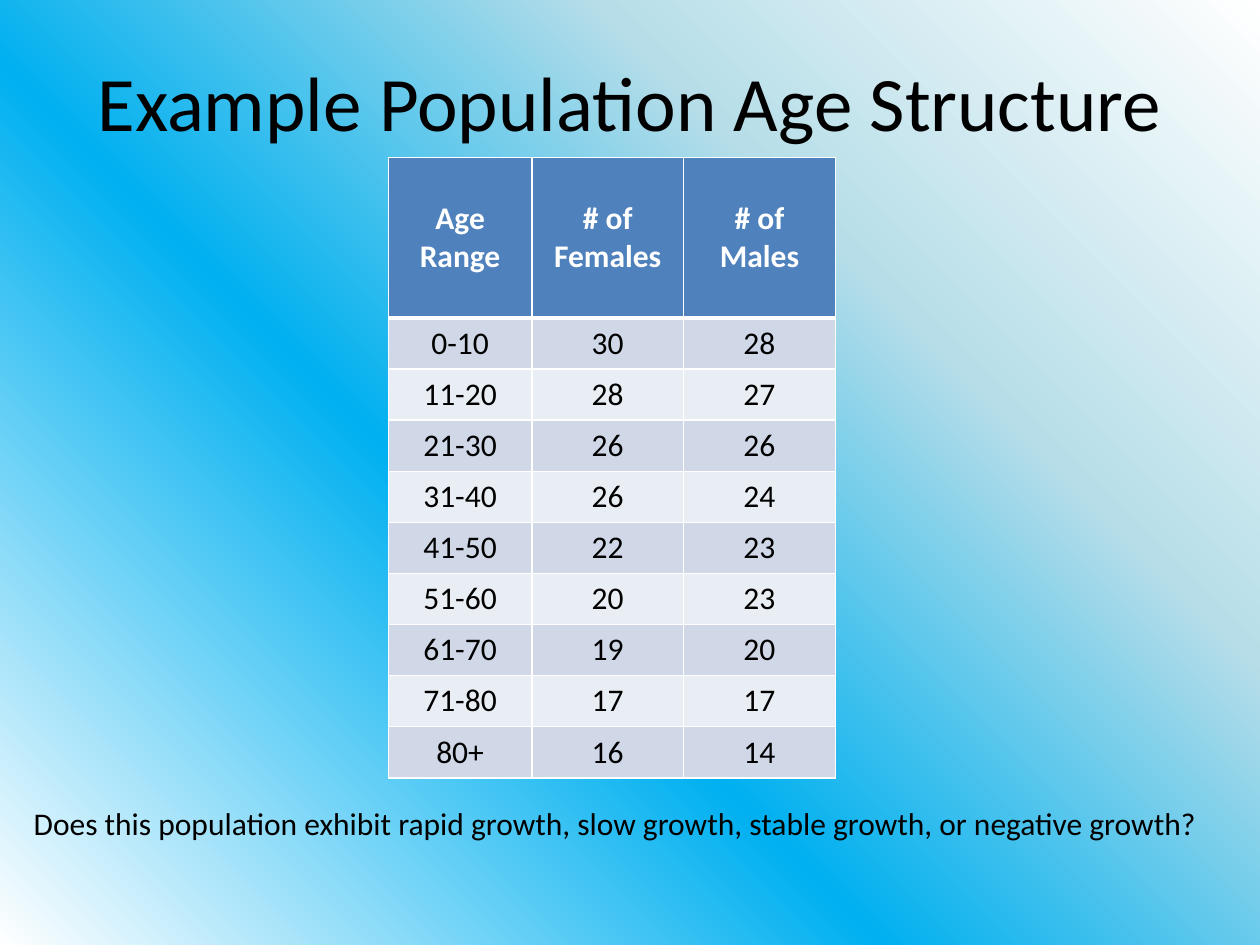
from lxml import etree
from pptx import Presentation
from pptx.dml.color import RGBColor
from pptx.enum import text
from pptx.oxml import parse_xml
from pptx.oxml.ns import nsdecls, qn
from pptx.util import Cm, Pt

BLACK = RGBColor(0x00, 0x00, 0x00)
WHITE = RGBColor(0xFF, 0xFF, 0xFF)
HEADER_BLUE = RGBColor(0x4F, 0x81, 0xBD)
BAND_DARK = RGBColor(0xD0, 0xD8, 0xE8)
BAND_LIGHT = RGBColor(0xE9, 0xED, 0xF4)
SKY = RGBColor(0x00, 0xB0, 0xF0)
PALE_TEAL = RGBColor(0xB7, 0xDE, 0xE8)

FONT = "Calibri"
BACKGROUND_STOPS = [(0, WHITE, 100), (40, SKY, 75), (70, PALE_TEAL, 90), (100, WHITE, 100)]
AGE_ROWS = [
    ("Age Range", "# of Females", "# of Males"),
    ("0-10", 30, 28),
    ("11-20", 28, 27),
    ("21-30", 26, 26),
    ("31-40", 26, 24),
    ("41-50", 22, 23),
    ("51-60", 20, 23),
    ("61-70", 19, 20),
    ("71-80", 17, 17),
    ("80+", 16, 14),
]


def set_background(s):
    """Fill the slide background with a diagonal gradient."""
    stops = "".join(
        f'<a:gs pos="{pos * 1000}"><a:srgbClr val="{color}">'
        f'<a:alpha val="{alpha * 1000}"/></a:srgbClr></a:gs>'
        for pos, color, alpha in BACKGROUND_STOPS
    )
    bg = parse_xml(
        f'<p:bg {nsdecls("p", "a")}><p:bgPr><a:gradFill rotWithShape="1">'
        f'<a:gsLst>{stops}</a:gsLst><a:lin ang="18900000" scaled="0"/>'
        "</a:gradFill><a:effectLst/></p:bgPr></p:bg>"
    )
    s.element.cSld.insert(0, bg)


def add_run(p, content, size, color=BLACK, bold=False):
    """Add one formatted run to a paragraph."""
    r = p.add_run()
    r.text = content
    r.font.name = FONT
    r.font.size = Pt(size)
    r.font.bold = bold
    r.font.color.rgb = color


def set_title(s, content):
    """Place and fill the title placeholder."""
    sp = s.shapes.title
    sp.left, sp.top, sp.width, sp.height = Cm(1.27), Cm(0.43), Cm(22.86), Cm(3.18)
    tf = sp.text_frame
    tf.vertical_anchor = text.MSO_ANCHOR.MIDDLE
    p = tf.paragraphs[0]
    p.alignment = text.PP_ALIGN.CENTER
    add_run(p, content, 44)


def set_borders(cell, bottom):
    """Draw white cell borders with a given bottom width in points."""
    tc_pr = cell._tc.get_or_add_tcPr()
    for side, width in (("L", 1), ("R", 1), ("T", 1), ("B", bottom)):
        ln = etree.SubElement(tc_pr, qn(f"a:ln{side}"), w=str(Pt(width)))
        fill = etree.SubElement(ln, qn("a:solidFill"))
        etree.SubElement(fill, qn("a:srgbClr"), val=str(WHITE))


def fill_cell(cell, content, row):
    """Write and format one table cell according to its row."""
    header = row == 0
    set_borders(cell, 3 if header else 1)
    cell.fill.solid()
    band = BAND_DARK if row % 2 else BAND_LIGHT
    cell.fill.fore_color.rgb = HEADER_BLUE if header else band
    cell.vertical_anchor = text.MSO_ANCHOR.MIDDLE
    p = cell.text_frame.paragraphs[0]
    p.alignment = text.PP_ALIGN.CENTER
    add_run(p, str(content), 18, WHITE if header else BLACK, header)


def add_age_table(s):
    """Add the age structure table."""
    frame = s.shapes.add_table(
        len(AGE_ROWS), len(AGE_ROWS[0]), Cm(7.83), Cm(3.17), Cm(9.01), Cm(12.4)
    )
    table = frame.table
    for column, width in zip(table.columns, (2.89, 3.06, 3.06)):
        column.width = Cm(width)
    for i, values in enumerate(AGE_ROWS):
        table.rows[i].height = Cm(1.02 if i else 3.24)
        for j, value in enumerate(values):
            fill_cell(table.cell(i, j), value, i)


def add_question(s, content):
    """Add the one-line question under the table."""
    tf = s.shapes.add_textbox(Cm(0.43), Cm(16.08), Cm(24.23), Cm(1.02)).text_frame
    tf.word_wrap = False
    tf.auto_size = text.MSO_AUTO_SIZE.SHAPE_TO_FIT_TEXT
    add_run(tf.paragraphs[0], content, 18)


def main():
    """Build and save the slide."""
    prs = Presentation()
    prs.slide_width, prs.slide_height = Cm(25.4), Cm(19.05)
    s = prs.slides.add_slide(prs.slide_layouts[5])
    set_background(s)
    set_title(s, "Example Population Age Structure")
    add_age_table(s)
    add_question(
        s,
        "Does this population exhibit rapid growth, slow growth, "
        "stable growth, or negative growth?",
    )
    prs.save("out.pptx")


if __name__ == "__main__":
    main()
